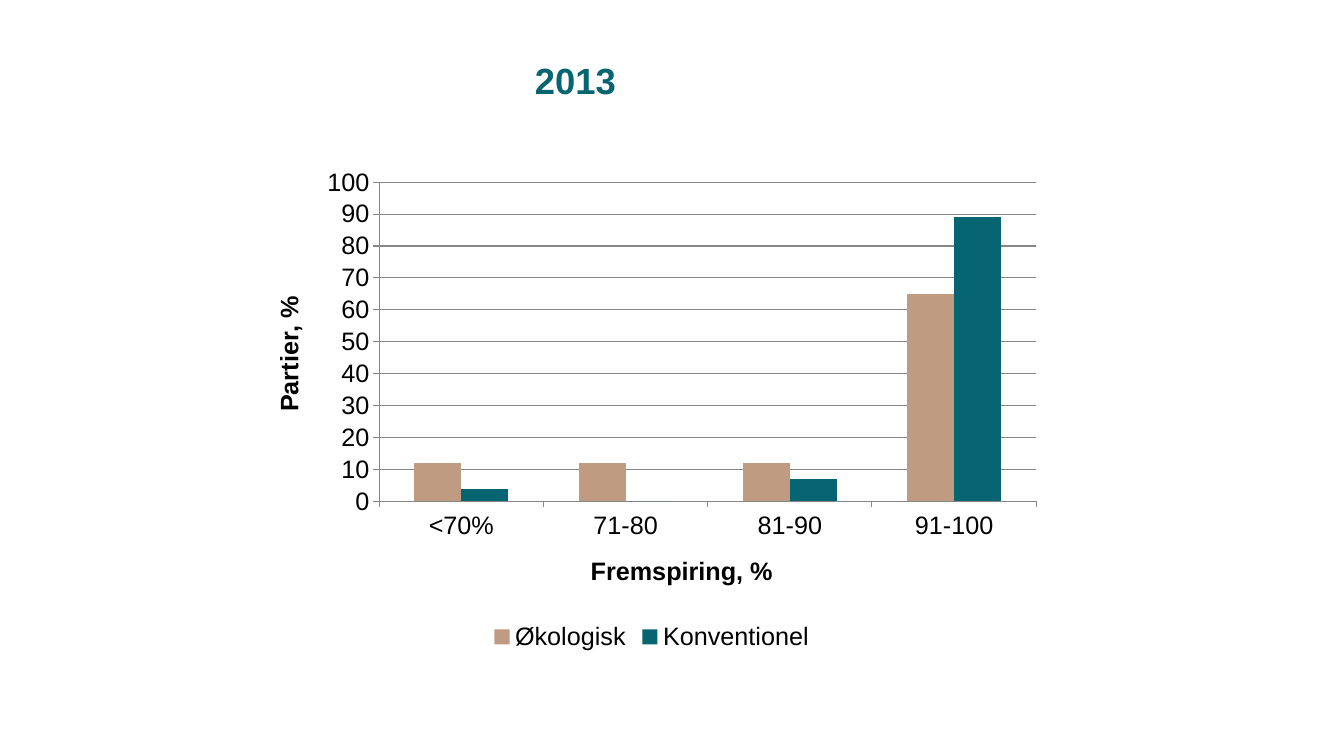
import dataclasses

import pptx
import pptx.chart.data
import pptx.dml.color
import pptx.enum.chart
import pptx.enum.text
import pptx.oxml
import pptx.oxml.ns
import pptx.util

Pt = pptx.util.Pt
RGBColor = pptx.dml.color.RGBColor


@dataclasses.dataclass(frozen=True)
class Theme:
    font: str = "Arial"
    teal: str = "076471"
    sand: str = "BF9C81"
    text: str = "000000"
    rule: str = "868686"
    title_size: float = 26
    chart_size: float = 18


@dataclasses.dataclass(frozen=True)
class Series:
    name: str
    values: tuple[int, ...]
    color: str


@dataclasses.dataclass(frozen=True)
class Box:
    left: float
    top: float
    width: float
    height: float


THEME = Theme()
TITLE_BOX = Box(41.76, 30.96, 738.72, 56.16)
CHART_BOX = Box(179.28, 112.32, 572.4, 356.4)
PLOT_SHARE = {"x": 0.16, "y": 0.05, "w": 0.82, "h": 0.64}
SPROUTING_RANGES = ("<70%", "71-80", "81-90", "91-100")
SEED_TYPES = (
    Series("Økologisk", (12, 12, 12, 65), THEME.sand),
    Series("Konventionel", (4, 0, 7, 89), THEME.teal),
)


def format_font(font, size: float, color: str, bold: bool) -> None:
    font.name = THEME.font
    font.size = Pt(size)
    font.bold = bold
    font.color.rgb = RGBColor.from_string(color)


def format_line(line) -> None:
    line.color.rgb = RGBColor.from_string(THEME.rule)
    line.width = Pt(0.75)


def set_title(heading, text: str) -> None:
    heading.left, heading.top = Pt(TITLE_BOX.left), Pt(TITLE_BOX.top)
    heading.width, heading.height = Pt(TITLE_BOX.width), Pt(TITLE_BOX.height)
    frame = heading.text_frame
    frame.margin_left = frame.margin_right = Pt(0)
    frame.margin_top = frame.margin_bottom = Pt(0)
    frame.vertical_anchor = pptx.enum.text.MSO_ANCHOR.MIDDLE
    frame.word_wrap = True
    frame.text = text
    paragraph = frame.paragraphs[0]
    paragraph.alignment = pptx.enum.text.PP_ALIGN.CENTER
    paragraph.line_spacing = 0.9
    format_font(paragraph.runs[0].font, THEME.title_size, THEME.teal, True)


def format_axis(axis, caption: str) -> None:
    axis.axis_title.text_frame.text = caption
    run = axis.axis_title.text_frame.paragraphs[0].runs[0]
    format_font(run.font, THEME.chart_size, THEME.text, True)
    format_font(axis.tick_labels.font, THEME.chart_size, THEME.text, False)
    axis.major_tick_mark = pptx.enum.chart.XL_TICK_MARK.OUTSIDE
    axis.minor_tick_mark = pptx.enum.chart.XL_TICK_MARK.NONE
    format_line(axis.format.line)


def place_plot(chart) -> None:
    plot_area = chart.plots[0]._element.getparent()
    for layout in plot_area.findall(pptx.oxml.ns.qn("c:layout")):
        plot_area.remove(layout)
    shares = "".join(f'<c:{key} val="{share}"/>' for key, share in PLOT_SHARE.items())
    plot_area.insert(0, pptx.oxml.parse_xml(
        f'<c:layout {pptx.oxml.ns.nsdecls("c")}><c:manualLayout>'
        '<c:layoutTarget val="inner"/><c:xMode val="edge"/><c:yMode val="edge"/>'
        f'{shares}</c:manualLayout></c:layout>'))


def add_sprouting_chart(slide) -> None:
    data = pptx.chart.data.CategoryChartData()
    data.categories = SPROUTING_RANGES
    for seed_type in SEED_TYPES:
        data.add_series(seed_type.name, seed_type.values)
    chart = slide.shapes.add_chart(
        pptx.enum.chart.XL_CHART_TYPE.COLUMN_CLUSTERED,
        Pt(CHART_BOX.left), Pt(CHART_BOX.top),
        Pt(CHART_BOX.width), Pt(CHART_BOX.height), data).chart
    format_font(chart.font, THEME.chart_size, THEME.text, False)
    chart.has_title = False

    columns = chart.plots[0]
    columns.gap_width = 150
    columns.overlap = 0
    columns.vary_by_categories = False
    for series, seed_type in zip(columns.series, SEED_TYPES):
        series.format.fill.solid()
        series.format.fill.fore_color.rgb = RGBColor.from_string(seed_type.color)
        series.invert_if_negative = False

    format_axis(chart.category_axis, "Fremspiring, %")
    format_axis(chart.value_axis, "Partier, %")
    chart.value_axis.minimum_scale = 0
    chart.value_axis.maximum_scale = 100
    chart.value_axis.major_unit = 10
    chart.value_axis.has_major_gridlines = True
    format_line(chart.value_axis.major_gridlines.format.line)

    chart.has_legend = True
    chart.legend.position = pptx.enum.chart.XL_LEGEND_POSITION.BOTTOM
    chart.legend.include_in_layout = False
    format_font(chart.legend.font, THEME.chart_size, THEME.text, False)
    place_plot(chart)


def main() -> None:
    presentation = pptx.Presentation()
    presentation.slide_width = Pt(960)
    presentation.slide_height = Pt(540)
    slide = presentation.slides.add_slide(presentation.slide_layouts[5])
    set_title(slide.shapes.title, "2013")
    add_sprouting_chart(slide)
    presentation.save("out.pptx")


if __name__ == "__main__":
    main()
